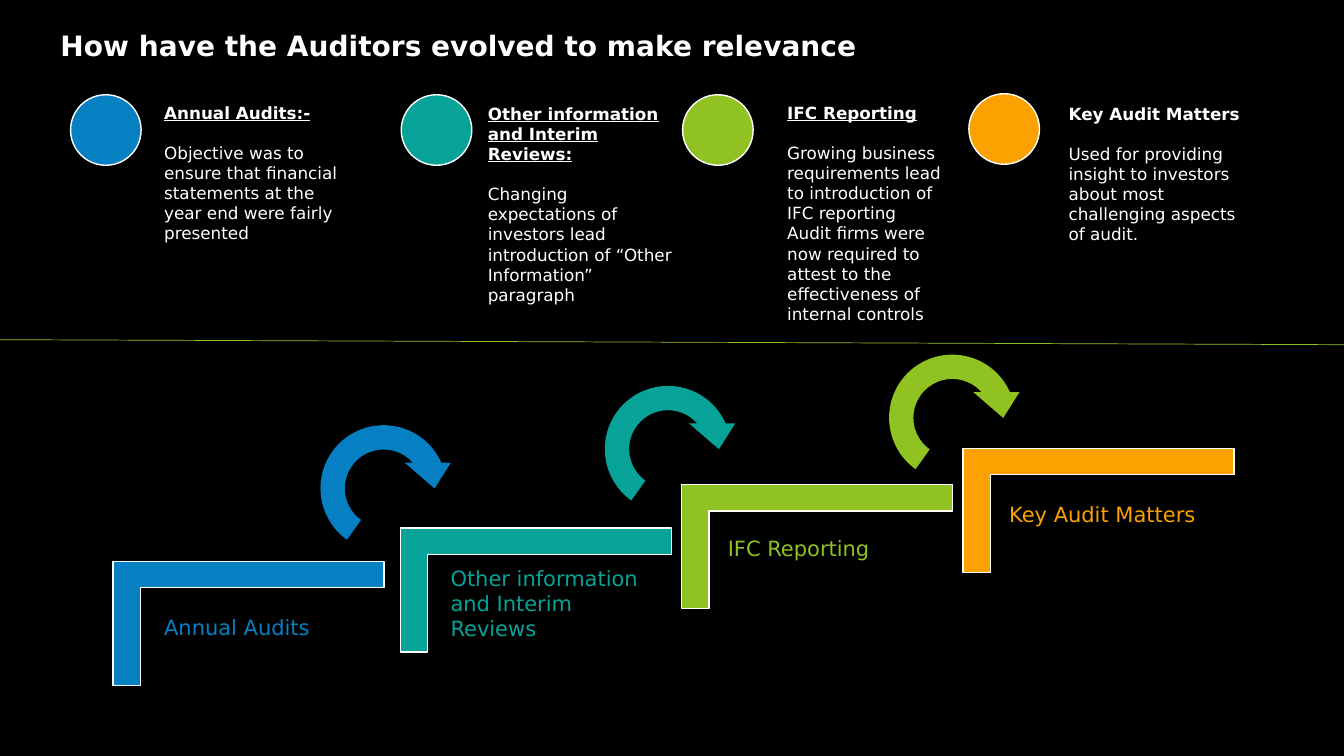
from dataclasses import dataclass
from lxml.etree import SubElement
from pptx import Presentation
from pptx.dml.color import RGBColor
from pptx.enum.shapes import MSO_CONNECTOR as Connector, MSO_SHAPE as Shape
from pptx.enum.text import MSO_ANCHOR as Anchor, MSO_AUTO_SIZE as AutoSize, PP_ALIGN as Align
from pptx.oxml.ns import qn
from pptx.util import Inches, Pt

TITLE = "How have the Auditors evolved to make relevance"
STAGES = [
    {"heading": "Annual Audits:-", "label": "Annual Audits", "underline": True,
     "body": ["Objective was to ensure that financial statements at the year end were fairly presented"]},
    {"heading": "Other information and Interim Reviews:", "label": "Other information and Interim Reviews",
     "underline": True,
     "body": ["Changing expectations of investors lead introduction of “Other Information” paragraph"]},
    {"heading": "IFC Reporting", "label": "IFC Reporting", "underline": True,
     "body": ["Growing business requirements lead to introduction of IFC reporting",
              "Audit firms were now required to attest to the effectiveness of internal controls"]},
    {"heading": "Key Audit Matters", "label": "Key Audit Matters", "underline": False,
     "body": ["Used for providing insight to investors about most challenging aspects of audit."]},
]


@dataclass(frozen=True)
class Theme:
    font: str = "DejaVu Sans"
    background: str = "000000"
    text: str = "FFFFFF"
    divider: str = "90C221"
    stages: tuple = ("0680C3", "07A398", "90C221", "FBA200")
    title_size: int = 20
    label_size: int = 15
    body_size: int = 12


THEME = Theme()
WIDTH, HEIGHT = 13.33, 7.5
CIRCLE = 0.7
CIRCLES = [(0.7, 0.94), (3.98, 0.94), (6.77, 0.94), (9.61, 0.93)]
DESCRIPTIONS = [(1.53, 0.97, 1.95, 1.51), (4.74, 0.98, 2.1, 2.32),
                (7.71, 0.97, 1.93, 2.32), (10.5, 0.98, 1.95, 1.51)]
STEP_LENGTH, STEP_DROP = 2.69, 1.23
STEPS = [(1.12, 5.57), (3.97, 5.24), (6.76, 4.81), (9.55, 4.45)]
LABELS = [(1.53, 6.05, 2.13, 0.35), (4.37, 5.55, 2.13, 0.86),
          (7.12, 5.26, 2.32, 0.35), (9.91, 4.92, 2.32, 0.35)]
ARROW, ARROW_LEFT, ARROW_PITCH = 1.47, 3.07, 2.82
ARROW_TOPS = [4.11, 3.72, 3.41]
CORNER_ADJUSTMENTS = {"adj1": 22100, "adj2": 21000}
ARROW_ADJUSTMENTS = (0.164, 18.214, 197.903, 75.279, 0.156)


def rgb(color):
    return RGBColor.from_string(color)


def box(left, top, width, height):
    return [Inches(length) for length in (left, top, width, height)]


def add_paragraph(frame, text, *, size, color=THEME.text, bold=False, underline=False, before=0):
    paragraph = frame.paragraphs[0]
    if paragraph.runs:
        paragraph = frame.add_paragraph()
    paragraph.alignment = Align.LEFT
    if before:
        paragraph.space_before = Pt(before)
    run = paragraph.add_run()
    run.text = text
    font = run.font
    font.name, font.size, font.bold, font.underline = THEME.font, Pt(size), bold, underline
    font.color.rgb = rgb(color)


def add_frame(slide, bounds, anchor=Anchor.TOP):
    frame = slide.shapes.add_textbox(*box(*bounds)).text_frame
    frame.word_wrap = True
    frame.auto_size = AutoSize.SHAPE_TO_FIT_TEXT
    frame.vertical_anchor = anchor
    return frame


def add_figure(slide, kind, bounds, color, *, outlined=True, adjustments=()):
    shape = slide.shapes.add_shape(kind, *box(*bounds))
    shape.shadow.inherit = False
    for index, value in enumerate(adjustments):
        shape.adjustments[index] = value
    shape.fill.solid()
    shape.fill.fore_color.rgb = rgb(color)
    if outlined:
        shape.line.color.rgb = rgb(THEME.text)
        shape.line.width = Pt(1)
    else:
        shape.line.fill.background()
    return shape


def add_step(slide, left, top, color):
    turn = (STEP_LENGTH - STEP_DROP) / 2
    bounds = (left + turn, top - turn, STEP_DROP, STEP_LENGTH)
    step = add_figure(slide, Shape.RECTANGLE, bounds, color)
    step.rotation = 90
    geometry = step.element.spPr.find(qn("a:prstGeom"))
    geometry.set("prst", "corner")
    guides = geometry.find(qn("a:avLst"))
    for name, value in CORNER_ADJUSTMENTS.items():
        SubElement(guides, qn("a:gd"), name=name, fmla=f"val {value}")


def add_title(slide):
    title = slide.shapes.title
    title.left, title.top, title.width, title.height = box(0.6, 0.28, 9.13, 0.39)
    frame = title.text_frame
    frame.margin_left = frame.margin_top = frame.margin_right = frame.margin_bottom = 0
    frame.auto_size = AutoSize.NONE
    frame.word_wrap = True
    frame.vertical_anchor = Anchor.TOP
    add_paragraph(frame, TITLE, size=THEME.title_size, bold=True)


def add_stage(slide, index, stage):
    color = THEME.stages[index]
    add_figure(slide, Shape.OVAL, (*CIRCLES[index], CIRCLE, CIRCLE), color)

    description = add_frame(slide, DESCRIPTIONS[index])
    add_paragraph(description, stage["heading"], size=THEME.body_size, bold=True,
                  underline=stage["underline"])
    for order, text in enumerate(stage["body"]):
        add_paragraph(description, text, size=THEME.body_size, before=0 if order else 14)

    add_step(slide, *STEPS[index], color)
    label = add_frame(slide, LABELS[index], Anchor.BOTTOM)
    add_paragraph(label, stage["label"], size=THEME.label_size, color=color)


def add_divider(slide):
    ends = [Inches(length) for length in (0, 3.37, WIDTH, 3.42)]
    divider = slide.shapes.add_connector(Connector.STRAIGHT, *ends)
    divider.line.color.rgb = rgb(THEME.divider)
    divider.line.width = Pt(0.5)
    SubElement(divider.element.spPr, qn("a:effectLst"))


def main():
    presentation = Presentation()
    presentation.slide_width, presentation.slide_height = Inches(WIDTH), Inches(HEIGHT)
    slide = presentation.slides.add_slide(presentation.slide_layouts[5])
    slide.background.fill.solid()
    slide.background.fill.fore_color.rgb = rgb(THEME.background)
    add_title(slide)
    for index, stage in enumerate(STAGES):
        add_stage(slide, index, stage)
    for index, top in enumerate(ARROW_TOPS):
        add_figure(slide, Shape.CIRCULAR_ARROW,
                   (ARROW_LEFT + index * ARROW_PITCH, top, ARROW, ARROW), THEME.stages[index],
                   outlined=False, adjustments=ARROW_ADJUSTMENTS)
    add_divider(slide)
    presentation.save("out.pptx")


if __name__ == "__main__":
    main()
